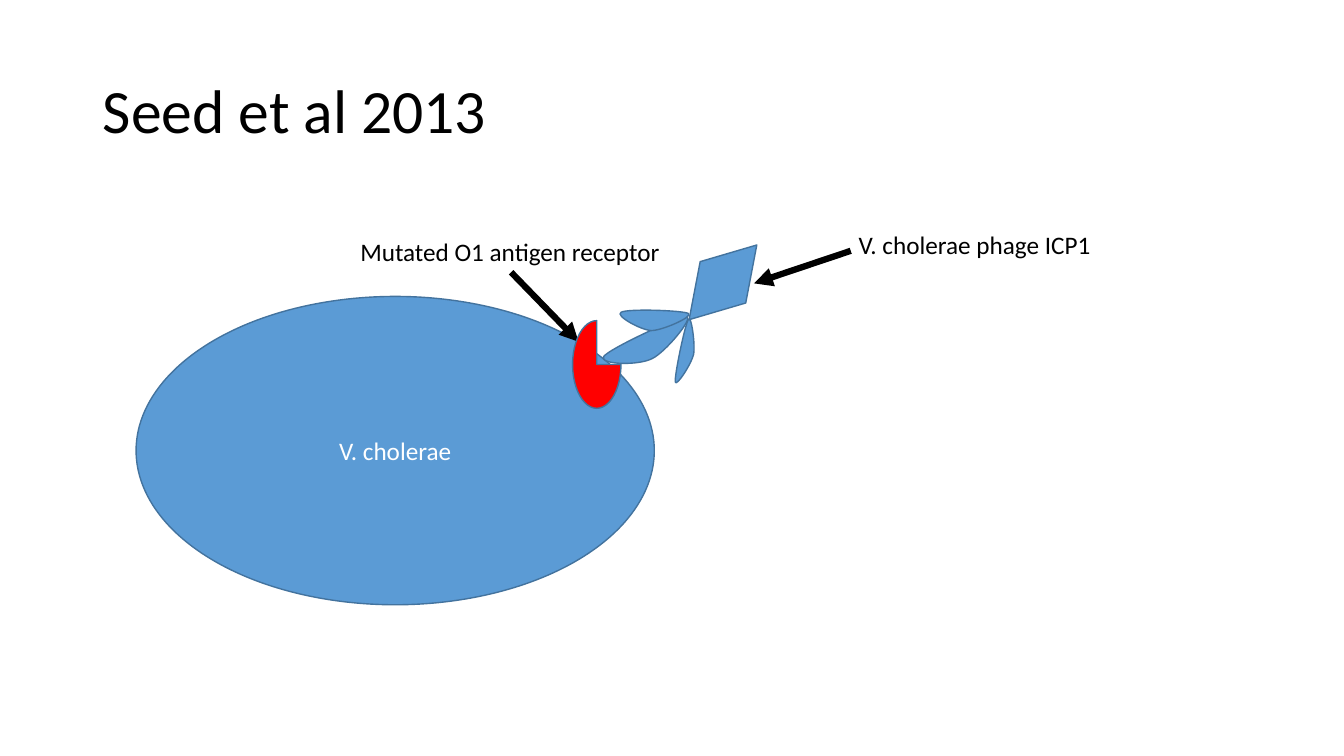
import math

import pptx
import pptx.util
import pptx.dml.color
import pptx.enum.shapes
import pptx.enum.text
import pptx.oxml
import pptx.oxml.ns

Cm, Pt = pptx.util.Cm, pptx.util.Pt
Shape = pptx.enum.shapes.MSO_SHAPE
Align = pptx.enum.text.PP_ALIGN
Anchor = pptx.enum.text.MSO_ANCHOR
BLUE, OUTLINE, RED, BLACK, WHITE = "5B9BD5", "43739E", "FF0000", "000000", "FFFFFF"
NAMESPACE = pptx.oxml.ns.nsdecls("a")


def paint(shape, fill):
    shape.shadow.inherit = False
    shape.fill.solid()
    shape.fill.fore_color.rgb = pptx.dml.color.RGBColor.from_string(fill)
    shape.line.color.rgb = pptx.dml.color.RGBColor.from_string(OUTLINE)
    shape.line.width = Pt(1)


def write(shape, text, size, color, align, **frame_format):
    """Fill a shape with one formatted line; frame_format sets text frame attributes."""
    frame = shape.text_frame
    for name, value in frame_format.items():
        setattr(frame, name, value)
    para = frame.paragraphs[0]
    para.alignment = align
    span = para.add_run()
    span.text = text
    for name, value in {"name": "Calibri", "size": Pt(size)}.items():
        setattr(span.font, name, value)
    span.font.color.rgb = pptx.dml.color.RGBColor.from_string(color)


deck = pptx.Presentation()
deck.slide_width, deck.slide_height = Cm(33.87), Cm(19.05)
page = deck.slides.add_slide(deck.slide_layouts[5])

title = page.shapes.title
title_place = {"left": 2.34, "top": 1.02, "width": 29.21, "height": 3.68}
for name, value in title_place.items():
    setattr(title, name, Cm(value))
write(title, "Seed et al 2013", 44, BLACK, Align.LEFT,
      vertical_anchor=Anchor.MIDDLE, word_wrap=True)
title.text_frame.paragraphs[0].line_spacing = 0.9

# Bacterium and phage head
infection = page.shapes.add_group_shape().shapes
cell = infection.add_shape(Shape.OVAL, Cm(3.43), Cm(7.47), Cm(13.06), Cm(7.77))
paint(cell, BLUE)
write(cell, "V. cholerae", 18, WHITE, Align.CENTER, vertical_anchor=Anchor.MIDDLE)

phage_head = infection.add_shape(Shape.FLOWCHART_DECISION,
                                 Cm(16.95), Cm(6.34), Cm(2.54), Cm(1.55))
phage_head.rotation = 312.2
paint(phage_head, BLUE)

# Phage fibres: frame, rotation, then a start point and three Bézier curves
fibres = [
    ((17.15, 8.05, 0.36, 1.65), 13.4,
     [(17.35, 8.05), (17.42, 7.92), (17.53, 8.69), (17.48, 8.94), (17.4, 9.22),
      (17.04, 9.75), (17.02, 9.63), (16.99, 9.47), (17.27, 8.15), (17.35, 8.05)]),
    ((16.03, 7.54, 0.69, 2.34), 65.7,
     [(17.3, 7.98), (17.5, 8), (16.76, 8.89), (16.43, 9.04), (16.08, 9.22),
      (15.11, 9.19), (15.21, 8.99), (15.34, 8.79), (17.09, 7.98), (17.3, 7.98)]),
    ((16.23, 7.19, 0.51, 1.75), 92.9,
     [(17.35, 7.9), (17.48, 7.98), (16.69, 8.33), (16.41, 8.33), (16.13, 8.31),
      (15.49, 7.95), (15.65, 7.87), (15.8, 7.77), (17.22, 7.82), (17.35, 7.9)]),
]
for (left, top, width, height), rotation, points in fibres:
    builder = infection.build_freeform(Cm(left), Cm(top))
    builder.add_line_segments([(Cm(left + width), Cm(top)),
                               (Cm(left + width), Cm(top + height))])
    fibre = builder.convert_to_shape()
    fibre.rotation = rotation
    paint(fibre, BLUE)

    # Turn the points back into the unrotated frame and draw the curves there
    cosine, sine = math.cos(math.radians(rotation)), math.sin(math.radians(rotation))
    marks = []
    for x, y in points:
        across, down = x - left - width / 2, y - top - height / 2
        local_x = Cm(width / 2 + across * cosine + down * sine)
        local_y = Cm(height / 2 - across * sine + down * cosine)
        marks.append(f'<a:pt x="{local_x}" y="{local_y}"/>')
    curves = "".join(f'<a:cubicBezTo>{"".join(marks[first:first + 3])}</a:cubicBezTo>'
                     for first in range(1, len(marks), 3))
    outline = pptx.oxml.parse_xml(
        f'<a:path {NAMESPACE} w="{Cm(width)}" h="{Cm(height)}">'
        f'<a:moveTo>{marks[0]}</a:moveTo>{curves}<a:close/></a:path>')
    frame_path = fibre._element.xpath(".//a:path")[0]
    frame_path.getparent().replace(frame_path, outline)

# Labels and their arrows
labels = []
for text, *place in [
    ("Mutated O1 antigen receptor", 8.83, 5.84, 8.1, 1.02),
    ("V. cholerae phage ICP1", 21.39, 5.66, 6.43, 1.02),
]:
    label = infection.add_textbox(*map(Cm, place))
    write(label, text, 18, BLACK, Align.LEFT, word_wrap=False,
          auto_size=pptx.enum.text.MSO_AUTO_SIZE.SHAPE_TO_FIT_TEXT)
    labels.append(label)

arrows = []
for ends in [(12.88, 6.86, 14.58, 8.61), (21.44, 6.32, 19, 7.14)]:
    arrow = infection.add_connector(pptx.enum.shapes.MSO_CONNECTOR.STRAIGHT, *map(Cm, ends))
    arrow.line.color.rgb = pptx.dml.color.RGBColor.from_string(BLACK)
    arrow.line.width = Pt(4.5)
    head = pptx.oxml.parse_xml(f'<a:tailEnd {NAMESPACE} type="triangle"/>')
    arrow.line._get_or_add_ln().append(head)
    arrow._element.spPr.append(pptx.oxml.parse_xml(f"<a:effectLst {NAMESPACE}/>"))
    arrows.append(arrow)
arrows[0].begin_connect(labels[0], 2)

receptor = page.shapes.add_shape(Shape.PIE, Cm(14.43), Cm(8.08), Cm(1.22), Cm(2.21))
paint(receptor, RED)

deck.save("out.pptx")
